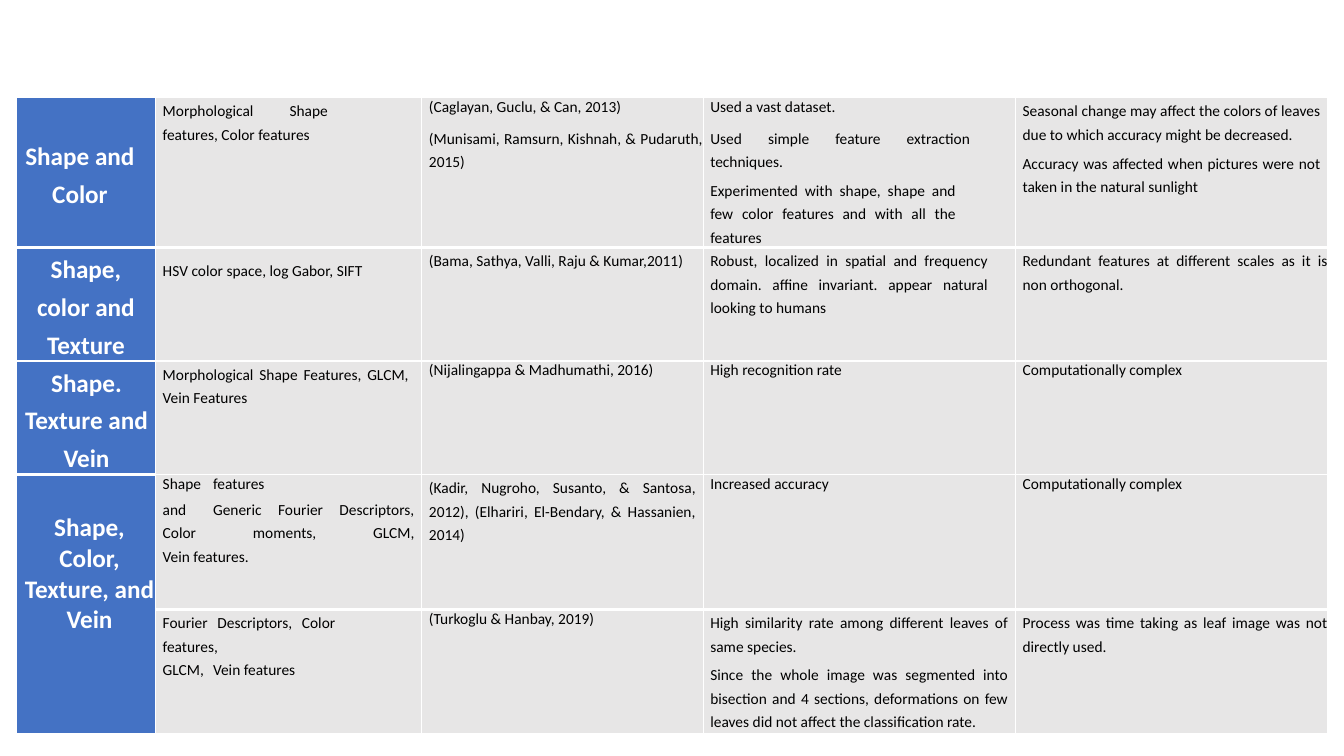
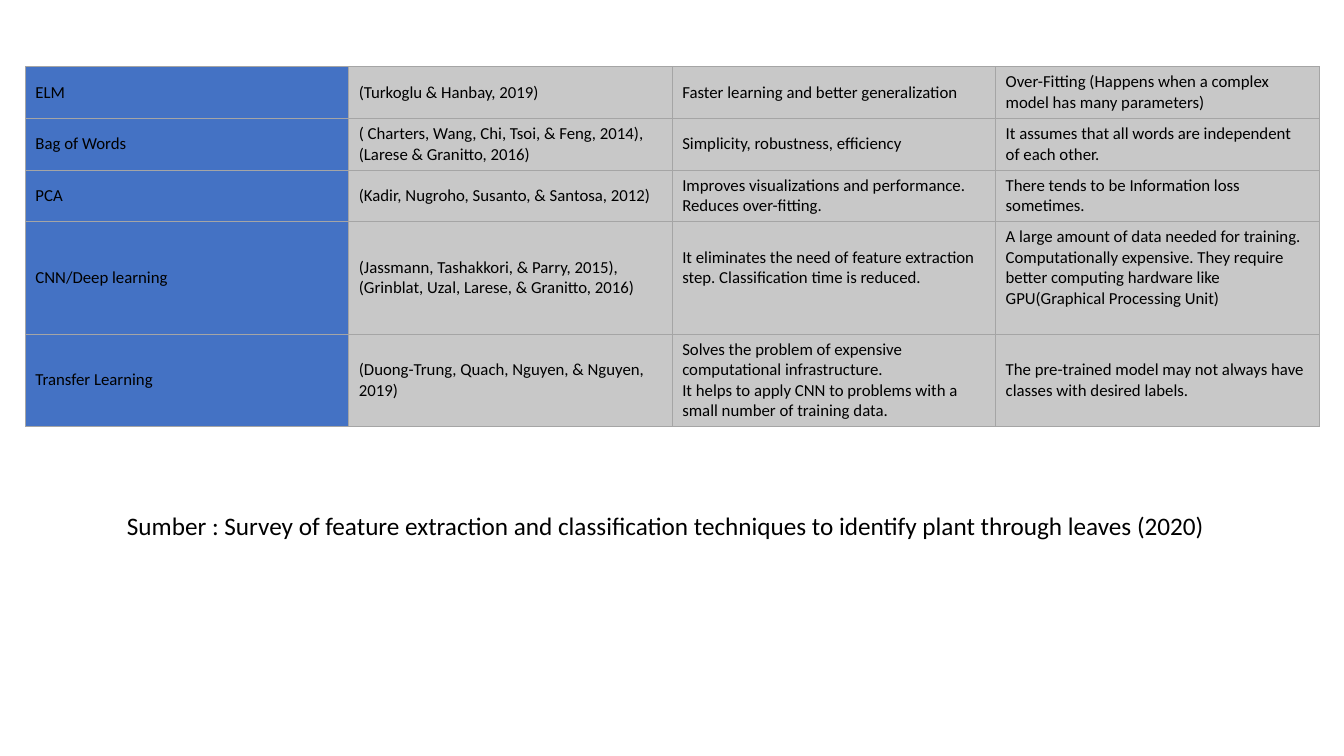
from lxml import etree
from pptx import Presentation
from pptx.dml.color import RGBColor
from pptx.enum.text import MSO_ANCHOR, PP_ALIGN
from pptx.oxml.ns import qn
from pptx.util import Cm, Pt

LEFT, CENTER, JUST = PP_ALIGN.LEFT, PP_ALIGN.CENTER, PP_ALIGN.JUSTIFY
TOP, MIDDLE = MSO_ANCHOR.TOP, MSO_ANCHOR.MIDDLE

FONT = "Calibri"
BLUE, PALE, GREY, EDGE = "4472C4", "E7E6E6", "C8C8C8", "A5A5A5"
BLACK, WHITE = "000000", "FFFFFF"


def par(text, right=0, line=1.23, before=1.4, tabs=()):
    """One paragraph; right indent and tab stops in cm, space before in points."""
    return dict(text=text, right=right, line=line, before=before, tabs=tabs)


# Each cell is a list of paragraphs
FEATURES = [
    [
        [par("Shape and Color", 0.48)],
        [par("Morphological Shape\tfeatures, Color features", 1.9, tabs=[1.14])],
        [par("(Caglayan, Guclu, & Can, 2013)", line=1),
         par("(Munisami, Ramsurn, Kishnah, & Pudaruth, 2015)", before=6)],
        [par("Used a vast dataset.", line=1),
         par("Used simple feature extraction techniques.", 1.14, before=6),
         par("Experimented with shape, shape and few color features and with "
             "all the features", 1.5, before=4)],
        [par("Seasonal change may affect the colors of leaves due to which "
             "accuracy might be decreased.", 0.18),
         par("Accuracy was affected when pictures were not taken in the "
             "natural sunlight", 0.18, before=4)],
    ],
    [
        [par("Shape, color and Texture", 0.18)],
        [par("HSV color space, log Gabor, SIFT", line=1.73)],
        [par("(Bama, Sathya, Valli, Raju & Kumar,2011)")],
        [par("Robust, localized in spatial and frequency domain. affine "
             "invariant. appear natural looking to humans", 0.69)],
        [par("Redundant features at different scales as it is non orthogonal.")],
    ],
    [
        [par("Shape. Texture and Vein", 0.15)],
        [par("Morphological Shape Features, GLCM,\tVein Features", 0.33, tabs=[1.52])],
        [par("(Nijalingappa & Madhumathi, 2016)", line=1)],
        [par("High recognition rate", line=1)],
        [par("Computationally complex", line=1)],
    ],
    [
        [par("Shape, Color, Texture, and Vein", line=1, before=0)],
        [par("Shape\tfeatures", line=1, tabs=[1.22]),
         par("and\tGeneric Fourier Descriptors, Color moments, GLCM,\vVein features.",
             0.18, before=1.9, tabs=[1.22])],
        [par("(Kadir, Nugroho, Susanto, & Santosa, 2012), (Elhariri, "
             "El-Bendary, & Hassanien, 2014)", 0.18)],
        [par("Increased accuracy", line=1)],
        [par("Computationally complex", line=1)],
    ],
    [
        [],
        [par("Fourier Descriptors, Color\tfeatures,", 1.14, tabs=[1.14]),
         par("GLCM,\tVein features", before=0.1, tabs=[1.52])],
        [par("(Turkoglu & Hanbay, 2019)", line=1)],
        [par("High similarity rate among different leaves of same species.", 0.18),
         par("Since the whole image was segmented into bisection and 4 "
             "sections, deformations on few leaves did not affect the "
             "classification rate.", 0.18, before=4)],
        [par("Process was time taking as leaf image was not directly used.")],
    ],
]

METHODS = [
    ["ELM", "(Turkoglu & Hanbay, 2019)",
     "Faster learning and better generalization",
     "Over-Fitting (Happens when a complex model has many parameters)"],
    ["Bag of Words",
     "( Charters, Wang, Chi, Tsoi, & Feng, 2014), (Larese & Granitto, 2016)",
     "Simplicity, robustness, efficiency",
     "It assumes that all words are independent of each other."],
    ["PCA", "(Kadir, Nugroho, Susanto, & Santosa, 2012)",
     "Improves visualizations and performance.\nReduces over-fitting.",
     "There tends to be Information loss sometimes."],
    ["CNN/Deep learning",
     "(Jassmann, Tashakkori, & Parry, 2015), (Grinblat, Uzal, Larese, & "
     "Granitto, 2016)",
     "It eliminates the need of feature extraction step. Classification "
     "time is reduced.",
     "A large amount of data needed for training. Computationally "
     "expensive. They require better computing hardware like "
     "GPU(Graphical Processing Unit)"],
    ["Transfer Learning", "(Duong-Trung, Quach, Nguyen, & Nguyen, 2019)",
     "Solves the problem of expensive computational infrastructure.\n"
     "It helps to apply CNN to problems with a small number of training data.",
     "The pre-trained model may not always have classes with desired labels."],
]

SOURCE = ("Sumber : Survey of feature extraction and classification "
          "techniques to identify plant through leaves (2020)")

HEAD = dict(size=Pt(18), bold=True, color=WHITE, align=CENTER, indent=0.18)
BODY = dict(size=Pt(11), bold=False, color=BLACK, align=JUST, indent=0.18)
PLAIN = dict(size=Pt(12), bold=False, color=BLACK, align=LEFT, indent=0)
NOTE = {**PLAIN, "size": Pt(18)}


def rgb(code):
    return RGBColor.from_string(code)


def write(frame, pars, style):
    for n, item in enumerate(pars):
        p = frame.paragraphs[0] if n == 0 else frame.add_paragraph()
        p.text = item["text"]
        form = dict(alignment=style["align"], line_spacing=item["line"],
                    space_before=Pt(item["before"]))
        for key, val in form.items():
            setattr(p, key, val)
        props = p._p.get_or_add_pPr()
        props.set("marL", str(Cm(style["indent"])))
        props.set("marR", str(Cm(item["right"])))
        props.set("indent", "0")
        if item["tabs"]:
            stops = etree.SubElement(props, qn("a:tabLst"))
            for pos in item["tabs"]:
                etree.SubElement(stops, qn("a:tab"), pos=str(Cm(pos)), algn="l")
        for run in p.runs:
            font = run.font
            font.name, font.size, font.bold = FONT, style["size"], style["bold"]
            font.color.rgb = rgb(style["color"])


def edge(cell, color, widths):
    """Draw the borders; widths in points for left, right, top, bottom."""
    props = cell._tc.get_or_add_tcPr()
    for side, width in zip("LRTB", widths):
        line = etree.SubElement(props, qn("a:ln" + side), w=str(Pt(width)))
        fill = etree.SubElement(line, qn("a:solidFill"))
        etree.SubElement(fill, qn("a:srgbClr"), val=color)


def grid(slide, left, top, cols, rows):
    shape = slide.shapes.add_table(len(rows), len(cols), Cm(left), Cm(top),
                                   Cm(sum(cols)), Cm(sum(rows)))
    table = shape.table
    table.first_row = table.horz_banding = False
    for col, width in zip(table.columns, cols):
        col.width = Cm(width)
    for row, height in zip(table.rows, rows):
        row.height = Cm(height)
    return table


def paint(cell, color, line, widths, anchor):
    edge(cell, line, widths)
    cell.fill.solid()
    cell.fill.fore_color.rgb = rgb(color)
    cell.vertical_anchor = anchor


def features(slide):
    table = grid(slide, 0.41, 2.46, [3.51, 6.71, 7.09, 7.87, 7.87],
                 [3.33, 2.85, 2.84, 3.4, 3.12])
    for r, row in enumerate(FEATURES):
        for c, pars in enumerate(row):
            cell = table.cell(r, c)
            first = c == 0
            above = 3 if r in ((1, 3) if first else (1, 4)) else 1
            below = 3 if r in ((0, 2) if first else (0, 3)) else 1
            paint(cell, BLUE if first else PALE, WHITE, (1, 1, above, below),
                  MIDDLE if first else TOP)
            for side in ("left", "right", "top", "bottom"):
                setattr(cell, "margin_" + side, 0)
            write(cell.text_frame, pars, HEAD if first else BODY)
    last = table.cell(3, 0)
    last.merge(table.cell(4, 0))
    last.margin_bottom = Cm(1.5)


def methods(slide):
    table = grid(slide, 0.64, 1.68, [8.15] * 4, [1.3, 1.3, 1.3, 2.84, 2.32])
    for r, row in enumerate(METHODS):
        for c, text in enumerate(row):
            cell = table.cell(r, c)
            paint(cell, GREY if c else BLUE, EDGE, [0.5] * 4, MIDDLE)
            pars = [par(part, line=1, before=0) for part in text.split("\n")]
            write(cell.text_frame, pars, PLAIN)
    for c in (2, 3):
        table.cell(3, c).margin_bottom = Cm(0.63)
    box = slide.shapes.add_textbox(Cm(2.95), Cm(12.73), Cm(27.97), Cm(1.8))
    box.text_frame.word_wrap = True
    write(box.text_frame, [par(SOURCE, line=1, before=0)], NOTE)


def main():
    deck = Presentation()
    deck.slide_width, deck.slide_height = Cm(33.87), Cm(19.05)
    for build in (features, methods):
        build(deck.slides.add_slide(deck.slide_layouts[6]))
    deck.save("out.pptx")


if __name__ == "__main__":
    main()
